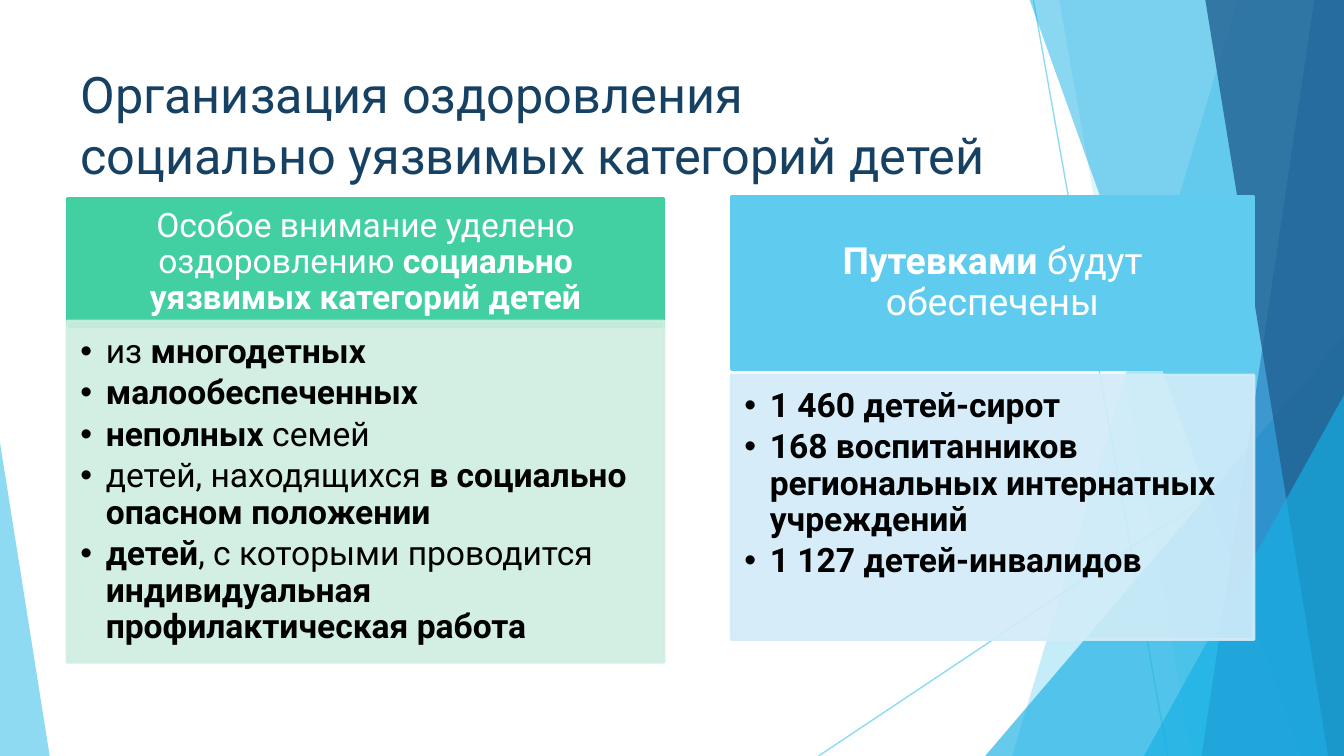
from lxml import etree
from pptx import Presentation
from pptx.dml.color import RGBColor
from pptx.enum.shapes import MSO_CONNECTOR, MSO_SHAPE
from pptx.enum.text import MSO_ANCHOR, PP_ALIGN
from pptx.oxml.ns import qn
from pptx.util import Cm, Pt

RECTANGLE, TRIANGLE = MSO_SHAPE.RECTANGLE, MSO_SHAPE.ISOSCELES_TRIANGLE
STRAIGHT = MSO_CONNECTOR.STRAIGHT
TOP, MIDDLE = MSO_ANCHOR.TOP, MSO_ANCHOR.MIDDLE
LEFT, CENTER = PP_ALIGN.LEFT, PP_ALIGN.CENTER

WIDTH, HEIGHT = 25.4, 14.29
FONT = "Roboto"
COLORS = {
    "title": "174162", "white": "FFFFFF", "black": "000000",
    "sky": "5FCBEF", "azure": "17B0E4", "blue": "2E83C3", "navy": "226292",
    "green": "42D0A2", "pale green": "CFEEE0", "pale blue": "D2ECF9",
}

# Content: ** switches bold on and off; all lengths are in centimetres
TITLE = "Организация оздоровления социально уязвимых категорий детей"
CARDS = [
    {
        "left": 1.27, "width": 11.28,
        "header": "Особое внимание уделено оздоровлению **социально уязвимых категорий детей**",
        "header_box": (3.76, 2.41), "header_size": 18,
        "header_insets": (0.36, 0.2, 0.36, 0.2), "header_color": "green",
        "items": [
            "из **многодетных**",
            "**малообеспеченных**",
            "**неполных** семей",
            "детей, находящихся **в социально опасном положении**",
            "**детей**, с которыми проводится **индивидуальная профилактическая работа**",
        ],
        "body_box": (6.07, 6.45), "body_color": "pale green",
    },
    {
        "left": 13.82, "width": 9.88,
        "header": "**Путевками** будут обеспечены",
        "header_box": (3.71, 3.28), "header_size": 20,
        "header_insets": (0.41, 0.23, 0.41, 0.23), "header_color": "sky",
        "items": [
            "**1 460 детей-сирот**",
            "**168 воспитанников региональных интернатных учреждений**",
            "**1 127 детей-инвалидов**",
        ],
        "body_box": (7.09, 5), "body_color": "pale blue",
    },
]
BODY_INSETS = (0.25, 0.25, 0.36, 0.41)
BULLET_INDENT = 0.48

# Background: rays are x1, y1, x2, y2
RAYS = [(19.53, 0, 22.07, HEIGHT), (WIDTH, 7.67, 15.47, HEIGHT)]
# Bands reach the right edge: x at top, x at bottom
# Triangles stand on the bottom edge: left, top, width, apex position
FACETS = [
    ("band", (23.39, 19.13), "sky", 36),
    ("band", (20.02, 22.53), "sky", 20),
    ("triangle", (18.62, 6.35, 6.78, 1), "azure", 66),
    ("band", (19.46, 24.59), "azure", 50),
    ("band", (24.84, 22.71), "blue", 70),
    ("band", (22.78, 25.1), "navy", 80),
    ("triangle", (21.62, 7.47, 3.78, 1), "azure", 66),
    ("triangle", (0, 8.36, 0.94, 0), "sky", 70),
]


def rgb(name):
    return RGBColor.from_string(COLORS[name])


def set_opacity(shape, percent):
    for color in shape._element.spPr.iter(qn("a:srgbClr")):
        etree.SubElement(color, qn("a:alpha"), val=str(percent * 1000))


def paint(shape, color, opacity=100, outline=None):
    shape.shadow.inherit = False
    shape.fill.solid()
    shape.fill.fore_color.rgb = rgb(color)
    if outline:
        shape.line.color.rgb = rgb(color)
        shape.line.width = Pt(outline)
    else:
        shape.line.fill.background()
    if opacity < 100:
        set_opacity(shape, opacity)


def write(frame, paragraphs, size, color, align=LEFT, anchor=TOP,
          insets=(0.25, 0.13, 0.25, 0.13), line_spacing=1.0, after=0, bullet=None):
    frame.word_wrap = True
    frame.vertical_anchor = anchor
    (frame.margin_left, frame.margin_top,
     frame.margin_right, frame.margin_bottom) = map(Cm, insets)
    for i, text in enumerate(paragraphs):
        p = frame.add_paragraph() if i else frame.paragraphs[0]
        p.alignment, p.line_spacing = align, line_spacing
        p.space_before, p.space_after = Pt(0), Pt(after)
        if bullet:
            props = p._p.get_or_add_pPr()
            props.set("marL", str(Cm(BULLET_INDENT)))
            props.set("indent", str(-Cm(BULLET_INDENT)))
            etree.SubElement(props, qn("a:buFont"), typeface="Arial")
            etree.SubElement(props, qn("a:buChar"), char=bullet)
        for j, part in enumerate(text.split("**")):
            if part:
                run = p.add_run()
                run.text = part
                run.font.name, run.font.size = FONT, Pt(size)
                run.font.bold = j % 2 == 1
                run.font.color.rgb = rgb(color)


def add_background(shapes):
    for ends in RAYS:
        ray = shapes.add_connector(STRAIGHT, *map(Cm, ends))
        ray.line.color.rgb = rgb("sky")
        ray.line.width = Pt(0.75)
        set_opacity(ray, 70)
        etree.SubElement(ray._element.spPr, qn("a:effectLst"))
    for kind, place, color, opacity in FACETS:
        if kind == "band":
            top_x, bottom_x = place
            outline = shapes.build_freeform(Cm(top_x), 0)
            corners = [(WIDTH, 0), (WIDTH, HEIGHT), (bottom_x, HEIGHT)]
            outline.add_line_segments([(Cm(x), Cm(y)) for x, y in corners])
            facet = outline.convert_to_shape()
        else:
            left, top, width, apex = place
            facet = shapes.add_shape(TRIANGLE, Cm(left), Cm(top), Cm(width), Cm(HEIGHT - top))
            facet.adjustments[0] = apex
        paint(facet, color, opacity)


def add_card(shapes, card):
    def panel(part, opacity):
        top, height = card[part + "_box"]
        box = shapes.add_shape(RECTANGLE, Cm(card["left"]), Cm(top), Cm(card["width"]), Cm(height))
        paint(box, card[part + "_color"], opacity, outline=1.5)
        return box.text_frame

    write(panel("header", 100), [card["header"]], card["header_size"], "white",
          align=CENTER, anchor=MIDDLE, insets=card["header_insets"], line_spacing=0.9)
    write(panel("body", 90), card["items"], 18, "black",
          insets=BODY_INSETS, line_spacing=0.9, after=2.8, bullet="•")


def main():
    prs = Presentation()
    prs.slide_width, prs.slide_height = Cm(WIDTH), Cm(HEIGHT)
    slide = prs.slides.add_slide(prs.slide_layouts[5])
    add_background(slide.shapes)

    # Title, brought in front of the background
    title = slide.shapes.title
    title.left, title.top, title.width, title.height = map(Cm, (1.27, 0.97, 17.91, 2.74))
    write(title.text_frame, [TITLE], 27, "title", anchor=MIDDLE)
    title.element.getparent().append(title.element)

    for card in CARDS:
        add_card(slide.shapes, card)
    prs.save("out.pptx")


if __name__ == "__main__":
    main()
